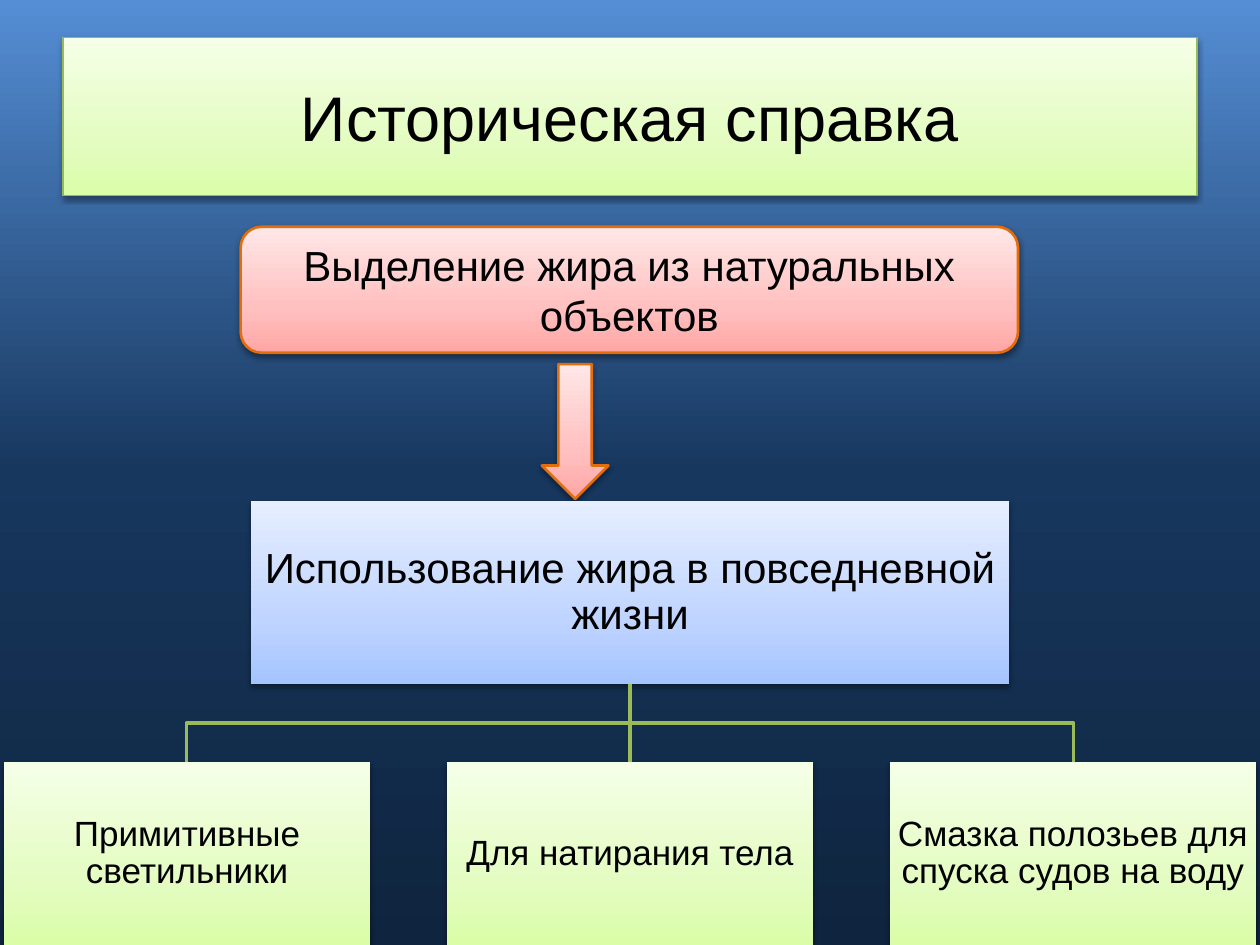
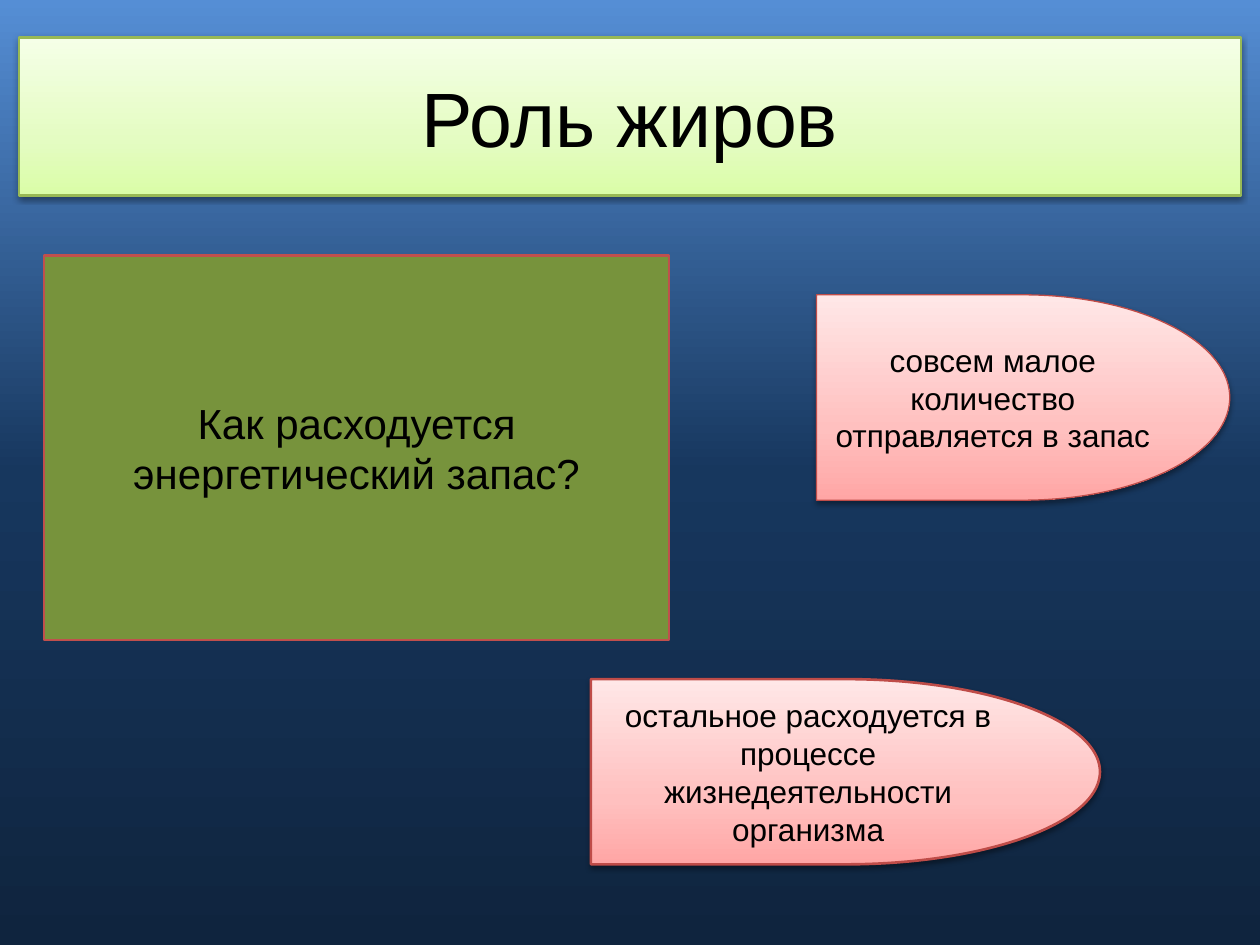
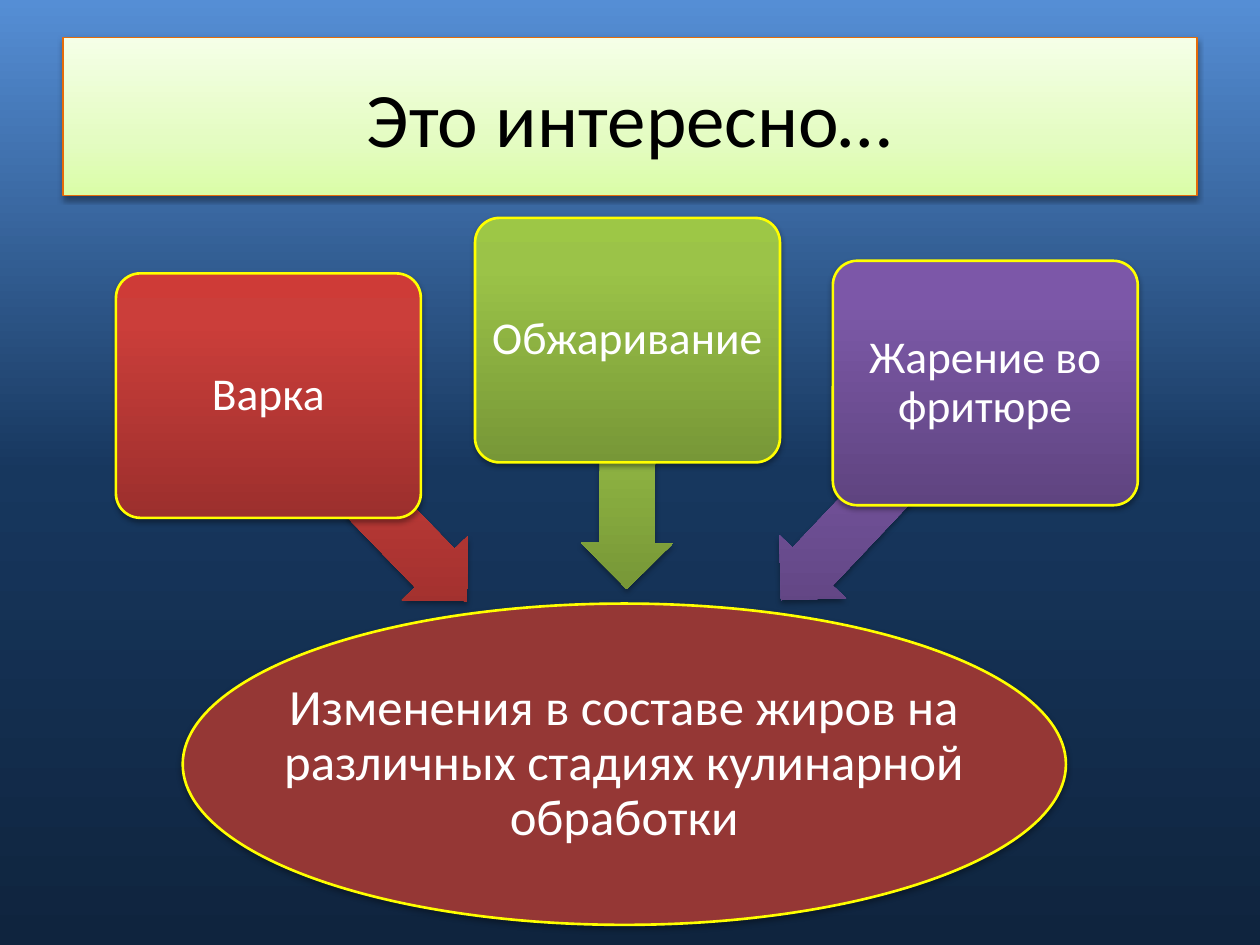
from lxml import etree
from pptx import Presentation
from pptx.dml.color import RGBColor
from pptx.enum.shapes import MSO_CONNECTOR, MSO_SHAPE as SHAPE
from pptx.enum.text import MSO_ANCHOR, PP_ALIGN
from pptx.oxml.ns import qn
from pptx.util import Inches, Pt

BLACK = RGBColor(0x00, 0x00, 0x00)
WHITE = RGBColor(0xFF, 0xFF, 0xFF)
YELLOW = RGBColor(0xFF, 0xFF, 0x00)
ORANGE = RGBColor(0xE4, 0x6C, 0x0A)
LIME = RGBColor(0x98, 0xB9, 0x55)
BRANCH = RGBColor(0x9B, 0xBB, 0x59)
OLIVE = RGBColor(0x77, 0x93, 0x3C)
BRICK = RGBColor(0xC0, 0x50, 0x4D)
ROSE = RGBColor(0xBF, 0x4C, 0x48)
MAROON = RGBColor(0x95, 0x37, 0x35)

NIGHT = [(0, "558ED5"), (50, "17375E"), (100, "0F243E")]
PALE_GREEN = [(0, "F5FFE7"), (65, "E4FCC2"), (100, "DAFDA7")]
PALE_RED = [(0, "FFE7E7"), (65, "FFC0BF"), (100, "FFA6A5")]
PALE_BLUE = [(0, "E6EEFF"), (65, "BFD4FF"), (100, "A4C4FF")]
RED = [(0, "CE3B37"), (20, "CB3E3A"), (100, "9C2F2D")]
GREEN = [(0, "9DC746"), (20, "9BC348"), (100, "779737")]
PURPLE = [(0, "7C57A8"), (20, "7B58A6"), (100, "5F4480")]


def set_gradient(fill, el, stops):
    fill.gradient()
    fill.gradient_angle = 270
    grad = el.find(".//" + qn("a:gradFill"))
    grad.set("rotWithShape", "0")
    gs_lst = grad.find(qn("a:gsLst"))
    for gs in list(gs_lst):
        gs_lst.remove(gs)
    for pos, color in stops:
        gs = etree.SubElement(gs_lst, qn("a:gs"), pos=str(pos * 1000))
        etree.SubElement(gs, qn("a:srgbClr"), val=color)


def dress(sp, fill, line=None, width=1.5, text="", size=24, font="Arial",
          color=BLACK, margin=None, spacing=None, shadow=38):
    if isinstance(fill, list):
        set_gradient(sp.fill, sp._element.spPr, fill)
    else:
        sp.fill.solid()
        sp.fill.fore_color.rgb = fill
    if line is None:
        sp.line.fill.background()
    else:
        sp.line.color.rgb = line
        sp.line.width = Pt(width)
    sp.shadow.inherit = False
    if shadow:
        effects = sp._element.spPr.find(qn("a:effectLst"))
        outer = etree.SubElement(effects, qn("a:outerShdw"), blurRad="40000", dist="20000",
                                 dir="5400000", rotWithShape="0")
        rgb = etree.SubElement(outer, qn("a:srgbClr"), val="000000")
        etree.SubElement(rgb, qn("a:alpha"), val=str(shadow * 1000))
    if text:
        tf = sp.text_frame
        tf.text = text
        tf.word_wrap = True
        tf.vertical_anchor = MSO_ANCHOR.MIDDLE
        if margin is not None:
            tf.margin_left = tf.margin_right = tf.margin_top = tf.margin_bottom = Inches(margin)
        p = tf.paragraphs[0]
        p.alignment = PP_ALIGN.CENTER
        p.line_spacing = spacing
        p.font.size = Pt(size)
        p.font.name = font
        p.font.color.rgb = color


prs = Presentation()
prs.slide_width, prs.slide_height = Inches(10), Inches(7.5)
master = prs.slide_master
set_gradient(master.background.fill, master._element, NIGHT)

slides = []
for text, left, size, font, line, width in [
    ("Историческая справка", 0.5, 36, "Arial", LIME, 0.75),
    ("Роль жиров", 0.15, 44, "Arial", LIME, 1.5),
    ("Это интересно…", 0.5, 44, "Calibri", ORANGE, 0.75),
]:
    s = prs.slides.add_slide(prs.slide_layouts[5])
    sp = s.shapes.title
    sp.left, sp.top = Inches(left), Inches(0.3)
    sp.width, sp.height = Inches(10 - 2 * left), Inches(1.25)
    dress(sp, PALE_GREEN, line, width, text, size, font)
    slides.append(s)
history, role, facts = slides

sp = history.shapes.add_shape(SHAPE.ROUNDED_RECTANGLE, Inches(1.91), Inches(1.8), Inches(6.17), Inches(1))
dress(sp, PALE_RED, ORANGE, text="Выделение жира из натуральных объектов")
sp = history.shapes.add_shape(SHAPE.DOWN_ARROW, Inches(4.3), Inches(2.89), Inches(0.53), Inches(1.07))
dress(sp, PALE_RED, ORANGE)

hub = history.shapes.add_shape(SHAPE.RECTANGLE, Inches(1.99), Inches(3.98), Inches(6.02), Inches(1.45))
dress(hub, PALE_BLUE, text="Использование жира в повседневной жизни", margin=0.02, spacing=0.9)
uses = []
for i, text in enumerate(["Примитивные светильники", "Для натирания тела",
                          "Смазка полозьев для спуска судов на воду"]):
    sp = history.shapes.add_shape(SHAPE.RECTANGLE, Inches(0.03 + 3.515 * i), Inches(6.05),
                                  Inches(2.91), Inches(1.45))
    dress(sp, PALE_GREEN, text=text, size=20, margin=0.01, spacing=0.9)
    uses.append(sp)

fb = history.shapes.build_freeform(Inches(1.48), Inches(6.05))
fb.add_line_segments([(Inches(x), Inches(y)) for x, y in [(1.48, 5.74), (8.52, 5.74), (8.52, 6.05)]],
                     close=False)
bracket = fb.convert_to_shape()
bracket.fill.background()
bracket.shadow.inherit = False
stem = history.shapes.add_connector(MSO_CONNECTOR.STRAIGHT, 0, 0, 0, 0)
stem.begin_connect(hub, 2)
stem.end_connect(uses[1], 0)
etree.SubElement(stem._element.spPr, qn("a:effectLst"))
for sp in (bracket, stem):
    sp.line.color.rgb = BRANCH
    sp.line.width = Pt(2)

sp = role.shapes.add_shape(SHAPE.RECTANGLE, Inches(0.35), Inches(2.03), Inches(4.96), Inches(3.05))
dress(sp, OLIVE, BRICK, text="Как расходуется энергетический запас?", shadow=0)
for text, box, width in [
    ("остальное расходуется в процессе жизнедеятельности организма", (4.69, 5.39, 4.04, 1.47), 1.5),
    ("совсем малое количество отправляется в запас", (6.48, 2.34, 3.28, 1.63), 0.75),
]:
    sp = role.shapes.add_shape(SHAPE.FLOWCHART_DELAY, *map(Inches, box))
    dress(sp, PALE_RED, ROSE, width, text, 18)

box = [Inches(v) for v in (1.45, 4.79, 7.01, 2.55)]
sp = facts.shapes.add_shape(SHAPE.OVAL, *box)
dress(sp, MAROON, YELLOW, shadow=35)
sp = facts.shapes.add_textbox(*box)
tf = sp.text_frame
tf.text = "Изменения в составе жиров на различных стадиях кулинарной обработки"
tf.word_wrap = True
tf.vertical_anchor = MSO_ANCHOR.MIDDLE
tf.margin_left = tf.margin_right = tf.margin_top = tf.margin_bottom = Inches(0.02)
p = tf.paragraphs[0]
p.alignment = PP_ALIGN.CENTER
p.line_spacing = 0.9
p.font.size = Pt(29)
p.font.name = "Calibri"
p.font.color.rgb = WHITE

for text, fill, left, top, arrow_box, angle in [
    ("Варка", RED, 0.92, 2.17, (1.78, 3.59, 2.27, 0.73), 225.9),
    ("Обжаривание", GREEN, 3.77, 1.73, (3.99, 3.32, 1.98, 0.73), 270.3),
    ("Жарение во фритюре", PURPLE, 6.61, 2.07, (5.83, 3.54, 2.36, 0.73), 313.4),
]:
    sp = facts.shapes.add_shape(SHAPE.LEFT_ARROW, *map(Inches, arrow_box))
    sp.rotation = angle
    sp.adjustments[0] = 0.6
    dress(sp, fill, shadow=35)
    sp = facts.shapes.add_shape(SHAPE.ROUNDED_RECTANGLE, Inches(left), Inches(top), Inches(2.42), Inches(1.94))
    sp.adjustments[0] = 0.1
    dress(sp, fill, YELLOW, 1.5, text, 26, "Calibri", WHITE, 0, 0.9, 35)

prs.save("out.pptx")
